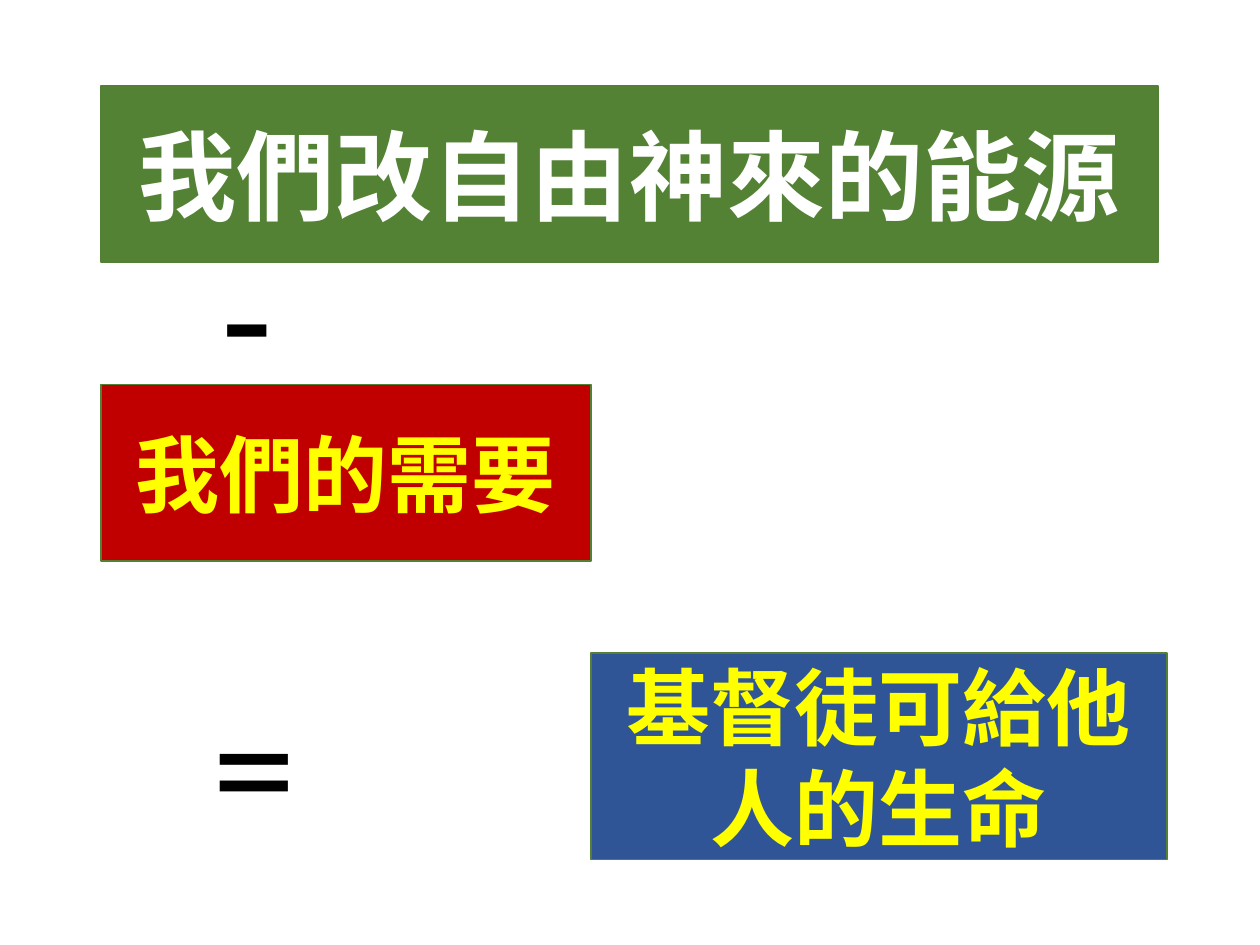
import pptx
import pptx.dml.color
import pptx.enum.shapes
import pptx.enum.text
import pptx.oxml.ns
import pptx.util
from lxml import etree

Cm = pptx.util.Cm
Pt = pptx.util.Pt
RGBColor = pptx.dml.color.RGBColor
TextAlign = pptx.enum.text.PP_ALIGN
Anchor = pptx.enum.text.MSO_ANCHOR
AutoSize = pptx.enum.text.MSO_AUTO_SIZE

GREEN = RGBColor(0x54, 0x82, 0x35)
OUTLINE = RGBColor(0x53, 0x80, 0x35)
RED = RGBColor(0xC0, 0x00, 0x00)
BLUE = RGBColor(0x2F, 0x55, 0x97)
WHITE = RGBColor(0xFF, 0xFF, 0xFF)
YELLOW = RGBColor(0xFF, 0xFF, 0x00)
BLACK = RGBColor(0x00, 0x00, 0x00)
CJK_FONT = "Noto Sans CJK TC"


def set_attributes(target, values):
    for attribute, value in values.items():
        setattr(target, attribute, value)


def write_text(holder, text, align, color, frame_format, font_format):
    set_attributes(holder.text_frame, frame_format)
    paragraph = holder.text_frame.paragraphs[0]
    paragraph.alignment = align
    run = paragraph.add_run()
    run.text = text
    set_attributes(run.font, font_format)
    run.font.color.rgb = color
    east_asian = etree.SubElement(run.font._element, pptx.oxml.ns.qn("a:ea"))
    east_asian.set("typeface", font_format["name"])


presentation = pptx.Presentation()
presentation.slide_width = Cm(25.4)
presentation.slide_height = Cm(19.05)
slide = presentation.slides.add_slide(presentation.slide_layouts[5])

# Energy from God (title), our needs, and the life left to give
energy = slide.shapes.title
needs, life = [
    slide.shapes.add_shape(pptx.enum.shapes.MSO_SHAPE.RECTANGLE, 0, 0, 0, 0)
    for _ in range(2)
]
box_frame = {
    "word_wrap": True,
    "auto_size": AutoSize.NONE,
    "vertical_anchor": Anchor.MIDDLE,
}
for box, text, left, top, width, height, fill, color, size in [
    (energy, "我們改自由神來的能源", 2.03, 1.73, 21.31, 3.56, GREEN, WHITE, 56),
    (needs, "我們的需要", 2.03, 7.75, 9.88, 3.56, RED, YELLOW, 48),
    (life, "基督徒可給他人的生命", 11.91, 13.16, 11.61, 4.17, BLUE, YELLOW, 48),
]:
    set_attributes(box, {
        "left": Cm(left), "top": Cm(top),
        "width": Cm(width), "height": Cm(height),
    })
    box.fill.solid()
    box.fill.fore_color.rgb = fill
    box.line.color.rgb = OUTLINE
    box.line.width = Pt(1)
    box.shadow.inherit = False
    box_font = {"name": CJK_FONT, "size": Pt(size), "bold": True}
    write_text(box, text, TextAlign.CENTER, color, box_frame, box_font)

# Minus and equals signs
sign_frame = {
    "word_wrap": True,
    "auto_size": AutoSize.SHAPE_TO_FIT_TEXT,
    "margin_left": 0,
    "margin_right": 0,
}
sign_font = {"name": "Calibri", "size": Pt(96)}
for symbol, left, top in [("-", 4.47, 4.11), ("=", 4.29, 13.16)]:
    sign = slide.shapes.add_textbox(Cm(left), Cm(top), Cm(0.13), Cm(4.37))
    write_text(sign, symbol, TextAlign.LEFT, BLACK, sign_frame, sign_font)

presentation.save("out.pptx")
